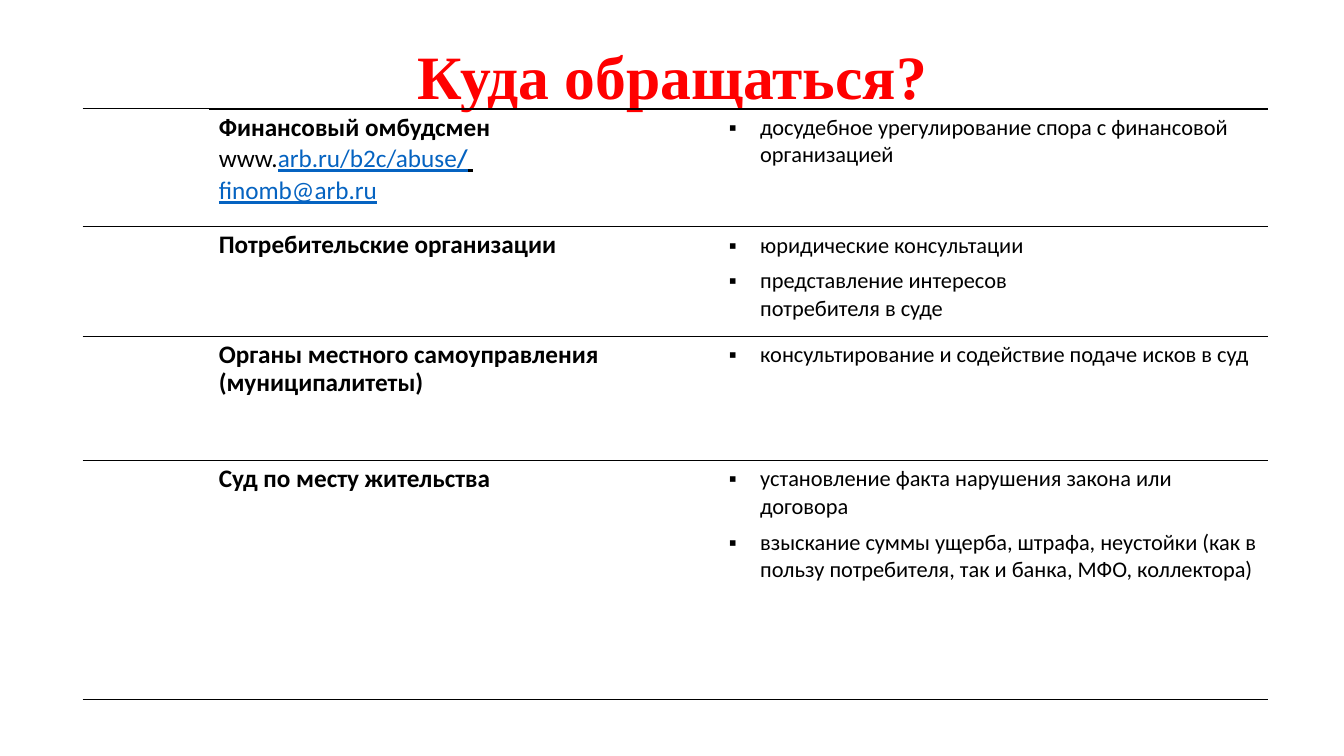
from lxml import etree
from pptx import Presentation
from pptx import util as u
from pptx.dml.color import RGBColor
from pptx.enum import text
from pptx.oxml import ns

RED = RGBColor(0xFF, 0x00, 0x00)
BLACK = RGBColor(0x00, 0x00, 0x00)
LINK = RGBColor(0x05, 0x63, 0xC1)
BODY_FONT = "Calibri"
PLAIN_STYLE = "{2D5ABB26-0587-4C30-8999-92F81FD0307C}"

COLUMNS = [1.25, 4.58, 0.48, 5.45]
ROWS = [1.17, 1.09, 1.23, 2.37]
CONTACTS = [
    [("www.", BLACK, False), ("arb.ru/b2c/abuse", LINK, False),
     ("/", LINK, True), (" ", BLACK, True)],
    [("finomb@arb.ru", LINK, False)],
]
BODIES = [
    ("Финансовый омбудсмен", CONTACTS,
     ["досудебное урегулирование спора с финансовой организацией"]),
    ("Потребительские организации", [],
     ["юридические консультации",
      "представление интересов \nпотребителя в суде"]),
    ("Органы местного самоуправления (муниципалитеты)", [],
     ["консультирование и содействие подаче исков в суд"]),
    ("Суд по месту жительства", [],
     ["установление факта нарушения закона или договора",
      "взыскание суммы ущерба, штрафа, неустойки (как в пользу "
      "потребителя, так и банка, МФО, коллектора)"]),
]


def add_run(p, words, size, color=BLACK, bold=False, underline=False,
            font=BODY_FONT):
    r = p.add_run()
    r.text = words
    r.font.name = font
    r.font.size = u.Pt(size)
    r.font.bold = bold
    r.font.underline = underline
    r.font.color.rgb = color


def next_paragraph(tf, i):
    return tf.add_paragraph() if i else tf.paragraphs[0]


def add_title(s, words):
    sp = s.shapes.add_textbox(u.Inches(0.92), u.Inches(0.4),
                              u.Inches(11.5), u.Inches(1.45))
    tf = sp.text_frame
    tf.word_wrap = True
    tf.vertical_anchor = text.MSO_ANCHOR.MIDDLE
    tf.margin_bottom = u.Inches(0.72)
    p = tf.paragraphs[0]
    p.alignment = text.PP_ALIGN.CENTER
    p.line_spacing = 0.9
    add_run(p, words, 44, RED, True, font="Times New Roman")


def set_border(cell, top, bottom):
    tcPr = cell._tc.get_or_add_tcPr()
    for i, (side, width) in enumerate((("a:lnT", top), ("a:lnB", bottom))):
        ln = etree.Element(ns.qn(side), w=str(u.Pt(width)))
        fill = etree.SubElement(ln, ns.qn("a:solidFill"))
        etree.SubElement(fill, ns.qn("a:srgbClr"), val=str(BLACK))
        tcPr.insert(i, ln)


def fill_body(cell, name, contacts):
    lines = [[(name, BLACK, True)]] + contacts
    for i, runs in enumerate(lines):
        p = next_paragraph(cell.text_frame, i)
        p.line_spacing = 0.9
        if i:
            p.space_before = u.Pt(3)
        for words, color, bold in runs:
            underline = i > 0 and words != "www."
            add_run(p, words, 18, color, bold, underline)


def fill_bullets(cell, items):
    for i, item in enumerate(items):
        p = next_paragraph(cell.text_frame, i)
        p.space_after = u.Pt(6)
        pPr = p._p.get_or_add_pPr()
        pPr.set("marL", str(u.Inches(0.31)))
        pPr.set("indent", str(-u.Inches(0.31)))
        etree.SubElement(pPr, ns.qn("a:buFont"), typeface="Arial")
        etree.SubElement(pPr, ns.qn("a:buChar"), char="▪")
        for j, line in enumerate(item.split("\n")):
            if j:
                p.add_line_break()
            add_run(p, line, 16)


def add_bodies_table(s):
    frame = s.shapes.add_table(len(ROWS), len(COLUMNS), u.Inches(0.82),
                               u.Inches(1.08), u.Inches(sum(COLUMNS)),
                               u.Inches(sum(ROWS)))
    table = frame.table
    table.first_row = False
    table.horz_banding = False
    table._tbl.tblPr.find(ns.qn("a:tableStyleId")).text = PLAIN_STYLE
    for column, width in zip(table.columns, COLUMNS):
        column.width = u.Inches(width)
    last = len(ROWS) - 1
    for i, (height, (name, contacts, duties)) in enumerate(zip(ROWS, BODIES)):
        table.rows[i].height = u.Inches(height)
        for j in range(len(COLUMNS)):
            cell = table.cell(i, j)
            cell.fill.background()
            if j:
                set_border(cell, 0.75 if i else 1.5, 1.5 if i == last else 0.75)
            else:
                set_border(cell, 1, 1)
        fill_body(table.cell(i, 1), name, contacts)
        fill_bullets(table.cell(i, 3), duties)


def main():
    prs = Presentation()
    prs.slide_width = u.Inches(13.33)
    prs.slide_height = u.Inches(7.5)
    s = prs.slides.add_slide(prs.slide_layouts[6])
    add_title(s, "Куда обращаться?")
    add_bodies_table(s)
    prs.save("out.pptx")


if __name__ == "__main__":
    main()
